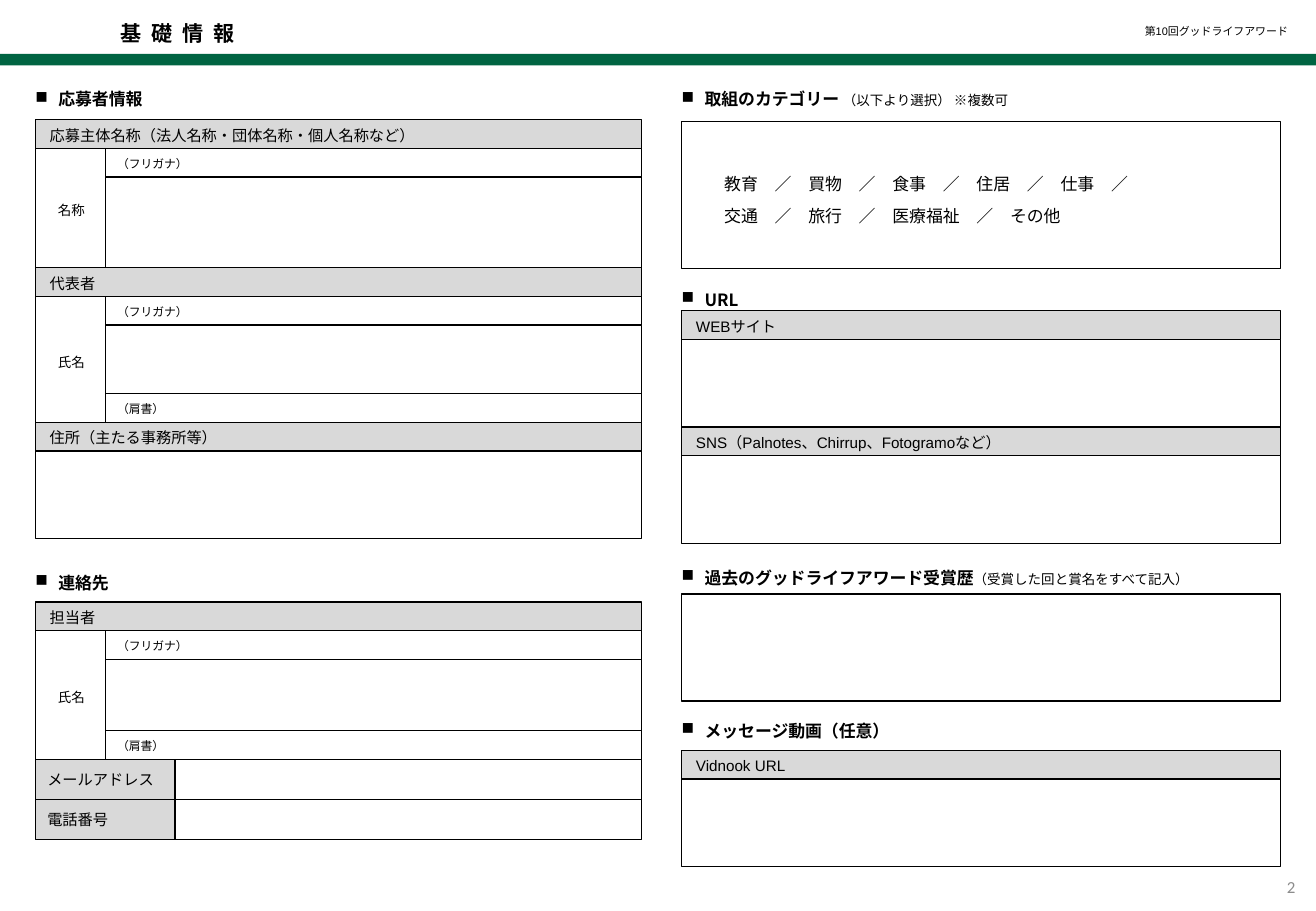
from lxml import etree
from pptx import Presentation
from pptx.dml.color import RGBColor
from pptx.enum import shapes, text
from pptx.oxml import ns
from pptx.util import Cm, Pt

COLORS = {"band": "006442", "header": "D9D9D9", "blank": "FFFFFF",
          "ink": "000000", "page": "8C8C8C"}
JAPANESE_FONT = "Noto Sans CJK JP"

# Column geometry and row heights in cm
LEFT_X, LEFT_W = 0.74, 12.67
RIGHT_X, RIGHT_W = 14.25, 12.52
LABEL_W, CONTACT_LABEL_W = 1.46, 2.92
STRIP_H, ANSWER_H, CONTACT_H = 0.6, 1.83, 0.84


def color(name):
    return RGBColor.from_string(COLORS[name])


def write(paragraph, content, size=9, font="Arial", bold=False, ink="ink", spacing=None):
    """Add one formatted run to a paragraph."""
    run = paragraph.add_run()
    run.text = content
    run.font.size = Pt(size)
    run.font.name = font
    run.font.bold = bold
    run.font.color.rgb = color(ink)
    properties = run.font._element
    properties.set("lang", "ja-JP")
    if spacing:
        properties.set("spc", str(spacing * 100))
    east_asian = etree.Element(ns.qn("a:ea"), typeface=JAPANESE_FONT)
    properties.find(ns.qn("a:latin")).addnext(east_asian)


def set_frame(shape, anchor, insets=(0.25, 0.13, 0.25, 0.13), wrap=True):
    frame = shape.text_frame
    frame.auto_size = text.MSO_AUTO_SIZE.NONE
    frame.word_wrap = wrap
    frame.vertical_anchor = anchor
    (frame.margin_left, frame.margin_top,
     frame.margin_right, frame.margin_bottom) = map(Cm, insets)
    return frame


def add_box(slide, x, y, width, height, fill="blank", outlined=True):
    box = slide.shapes.add_shape(shapes.MSO_SHAPE.RECTANGLE,
                                 Cm(x), Cm(y), Cm(width), Cm(height))
    box.shadow.inherit = False
    box.fill.solid()
    box.fill.fore_color.rgb = color(fill)
    if outlined:
        box.line.color.rgb = color("ink")
        box.line.width = Pt(0.75)
    else:
        box.line.fill.background()
    return box


def add_cell(slide, x, y, width, height, content, fill="blank",
             insets=(0.25, 0.25, 0.25, 0.2), align=text.PP_ALIGN.LEFT, **style):
    """Draw a form cell with one line of text."""
    cell = add_box(slide, x, y, width, height, fill)
    paragraph = set_frame(cell, text.MSO_ANCHOR.MIDDLE, insets).paragraphs[0]
    paragraph.alignment = align
    write(paragraph, content, **style)


def add_header(slide, x, y, width, content, font="Calibri"):
    add_cell(slide, x, y, width, STRIP_H, content, "header",
             (0.3, 0.25, 0.25, 0.2), font=font)


def add_heading(slide, x, y, width, content, note="", height=0.69, font="Arial"):
    """Add a section heading with a square bullet."""
    heading = slide.shapes.add_textbox(Cm(x - 0.25), Cm(y), Cm(width), Cm(height))
    paragraph = set_frame(heading, text.MSO_ANCHOR.MIDDLE, wrap=False).paragraphs[0]
    properties = paragraph._p.get_or_add_pPr()
    properties.set("marL", str(Cm(0.48)))
    properties.set("indent", str(-Cm(0.48)))
    etree.SubElement(properties, ns.qn("a:buChar"), char="■")
    write(paragraph, content, size=10, font=font, bold=True)
    if note:
        write(paragraph, note, size=8)


def add_name_block(slide, y, header, label, rows):
    """Stack a header and its name rows; return the bottom edge."""
    add_header(slide, LEFT_X, y, LEFT_W, header)
    y += STRIP_H
    block_h = sum(height for _, height in rows)
    add_cell(slide, LEFT_X, y, LABEL_W, block_h, label, insets=(0.3, 0.3, 0.25, 0.2),
             align=text.PP_ALIGN.CENTER, size=8, font="Calibri")
    for caption, height in rows:
        row = (LEFT_X + LABEL_W, y, LEFT_W - LABEL_W, height)
        if caption:
            add_cell(slide, *row, caption, size=7)
        else:
            add_box(slide, *row)
        y += height
    return y


def add_answer_block(slide, x, y, width, header, font="Arial"):
    """Place an empty answer box under a header; return the bottom edge."""
    add_header(slide, x, y, width, header, font)
    add_box(slide, x, y + STRIP_H, width, ANSWER_H)
    return y + STRIP_H + ANSWER_H


def add_page_frame(slide):
    add_box(slide, 0, 1.13, 27.51, 0.24, "band", outlined=False)

    title = slide.shapes.title
    title.left, title.top, title.width, title.height = map(Cm, (2.26, 0.41, 11.5, 0.68))
    paragraph = set_frame(title, text.MSO_ANCHOR.BOTTOM).paragraphs[0]
    paragraph.alignment = text.PP_ALIGN.LEFT
    paragraph.line_spacing = 0.9
    write(paragraph, "基礎情報", size=12.5, bold=True, spacing=6)

    award = slide.shapes.add_textbox(Cm(23.3), Cm(0.3), Cm(3.88), Cm(0.69))
    page = slide.shapes.add_textbox(Cm(25.73), Cm(18.03), Cm(1.6), Cm(1.02))
    for box, anchor, content, style in (
            (award, text.MSO_ANCHOR.BOTTOM, "第10回グッドライフアワード", {"size": 6.5}),
            (page, text.MSO_ANCHOR.MIDDLE, "2",
             {"size": 10, "font": "Calibri", "ink": "page"})):
        paragraph = set_frame(box, anchor, (0.25, 0.2, 0.25, 0.2)).paragraphs[0]
        paragraph.alignment = text.PP_ALIGN.RIGHT
        write(paragraph, content, **style)


def add_left_column(slide):
    # Applicant
    add_heading(slide, LEFT_X, 1.73, 2.77, "応募者情報")
    y = add_name_block(slide, 2.5, "応募主体名称（法人名称・団体名称・個人名称など）", "名称",
                       [("（フリガナ）", STRIP_H), ("", 1.9)])
    y = add_name_block(slide, y, "代表者", "氏名",
                       [("（フリガナ）", STRIP_H), ("", 1.43), ("（肩書）", STRIP_H)])
    add_answer_block(slide, LEFT_X, y, LEFT_W, "住所（主たる事務所等）", "Calibri")

    # Contact
    add_heading(slide, LEFT_X, 11.84, 2.06, "連絡先")
    y = add_name_block(slide, 12.59, "担当者", "氏名",
                       [("（フリガナ）", STRIP_H), ("", 1.49), ("（肩書）", STRIP_H)])
    for label in ("メールアドレス", "電話番号"):
        add_cell(slide, LEFT_X, y, CONTACT_LABEL_W, CONTACT_H, label, "header",
                 (0.25, 0.2, 0.25, 0.2))
        add_box(slide, LEFT_X + CONTACT_LABEL_W, y, LEFT_W - CONTACT_LABEL_W, CONTACT_H)
        y += CONTACT_H


def add_right_column(slide):
    # Categories
    add_heading(slide, RIGHT_X, 1.73, 7.42, "取組のカテゴリー ", "（以下より選択） ※複数可")
    categories = add_box(slide, RIGHT_X, 2.54, RIGHT_W, 3.07)
    frame = set_frame(categories, text.MSO_ANCHOR.MIDDLE, (0.89, 0.2, 0.25, 0.2))
    first = frame.paragraphs[0]
    second = frame.add_paragraph()
    second.space_before = Pt(1)
    for paragraph, choices in ((first, "教育　／　買物　／　食事　／　住居　／　仕事　／"),
                               (second, "交通　／　旅行　／　医療福祉　／　その他")):
        paragraph.alignment = text.PP_ALIGN.LEFT
        paragraph.line_spacing = 1.5
        write(paragraph, choices, size=10)

    # Web addresses
    add_heading(slide, RIGHT_X, 5.87, 1.93, "URL", height=0.79, font=JAPANESE_FONT)
    y = 6.5
    for header in ("WEBサイト", "SNS（Palnotes、Chirrup、Fotogramoなど）"):
        y = add_answer_block(slide, RIGHT_X, y, RIGHT_W, header)

    # Past awards
    add_heading(slide, RIGHT_X, 11.73, 11.25, "過去のグッドライフアワード受賞歴",
                "（受賞した回と賞名をすべて記入）")
    add_box(slide, RIGHT_X, 12.42, RIGHT_W, 2.24)

    # Message video
    add_heading(slide, RIGHT_X, 14.94, 4.9, "メッセージ動画（任意）")
    add_answer_block(slide, RIGHT_X, 15.69, RIGHT_W, "Vidnook URL")


def main():
    prs = Presentation()
    prs.slide_width, prs.slide_height = Cm(27.51), Cm(19.05)
    slide = prs.slides.add_slide(prs.slide_layouts[5])
    add_page_frame(slide)
    add_left_column(slide)
    add_right_column(slide)
    prs.save("out.pptx")


if __name__ == "__main__":
    main()
